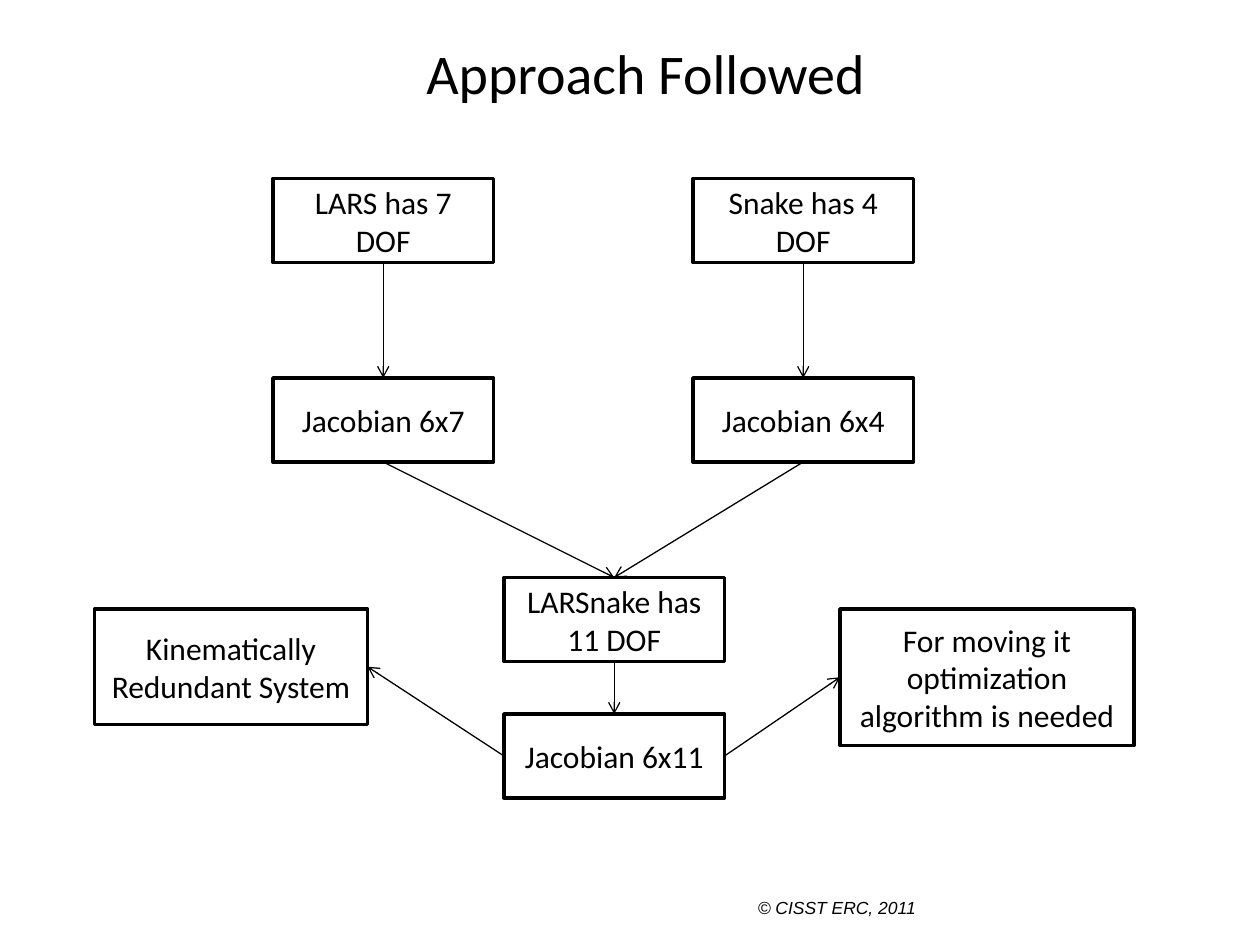
"""Build the "Approach Followed" flowchart slide on a grid of 120 columns by 90 rows."""
from dataclasses import dataclass

from pptx import Presentation
from pptx.dml.color import RGBColor
from pptx.enum.shapes import MSO_CONNECTOR, MSO_SHAPE
from pptx.enum.text import MSO_ANCHOR, PP_ALIGN
from pptx.oxml.ns import qn
from pptx.shapes.autoshape import Shape
from pptx.slide import Slide
from pptx.text.text import TextFrame
from pptx.util import Inches, Pt
from lxml import etree

BLACK = RGBColor(0x00, 0x00, 0x00)
WHITE = RGBColor(0xFF, 0xFF, 0xFF)
RECTANGLE = MSO_SHAPE.RECTANGLE
STRAIGHT = MSO_CONNECTOR.STRAIGHT
MIDDLE = MSO_ANCHOR.MIDDLE
LEFT_ALIGN, CENTER = PP_ALIGN.LEFT, PP_ALIGN.CENTER
TOP, LEFT, BOTTOM, RIGHT = range(4)

PAGE_WIDTH, PAGE_HEIGHT = Inches(10), Inches(7.5)
COLUMN, ROW = PAGE_WIDTH // 120, PAGE_HEIGHT // 90


@dataclass(frozen=True)
class Step:
    """A flowchart box, measured in columns and rows."""
    text: str
    column: int
    row: int
    columns: int = 21
    rows: int = 8


@dataclass(frozen=True)
class Link:
    """An arrow from one side of a step to one side of another."""
    source: str
    target: str
    source_side: int = BOTTOM
    target_side: int = TOP


STEPS = {
    "lars": Step("LARS has 7 DOF", 26, 17),
    "snake": Step("Snake has 4 DOF", 66, 17),
    "lars_jacobian": Step("Jacobian 6x7", 26, 36),
    "snake_jacobian": Step("Jacobian 6x4", 66, 36),
    "larsnake": Step("LARSnake has 11 DOF", 48, 55),
    "larsnake_jacobian": Step("Jacobian 6x11", 48, 68),
    "redundant": Step("Kinematically Redundant System", 9, 58, 26, 11),
    "optimization": Step("For moving it optimization algorithm is needed", 80, 58, 28, 13),
}

LINKS = [
    Link("lars", "lars_jacobian"),
    Link("snake", "snake_jacobian"),
    Link("lars_jacobian", "larsnake"),
    Link("snake_jacobian", "larsnake"),
    Link("larsnake", "larsnake_jacobian"),
    Link("larsnake_jacobian", "redundant", LEFT, RIGHT),
    Link("larsnake_jacobian", "optimization", RIGHT, LEFT),
]


def write(frame: TextFrame, text: str, *, size: int, font: str = "Calibri",
          align: PP_ALIGN = CENTER, anchor: MSO_ANCHOR = MIDDLE,
          italic: bool = False) -> None:
    """Fill a text frame with one formatted paragraph."""
    frame.word_wrap = True
    frame.vertical_anchor = anchor
    para = frame.paragraphs[0]
    para.alignment = align
    span = para.add_run()
    span.text = text
    span.font.name = font
    span.font.size = Pt(size)
    span.font.italic = italic
    span.font.color.rgb = BLACK


def add_title(page: Slide, text: str) -> None:
    """Move and fill the title placeholder."""
    title = page.shapes.title
    title.left, title.top = 23 * COLUMN, 3 * ROW
    title.width, title.height = 77 * COLUMN, Inches(0.64)
    write(title.text_frame, text, size=32)


def add_step(page: Slide, step: Step) -> Shape:
    """Draw one flowchart box."""
    box = page.shapes.add_shape(RECTANGLE, step.column * COLUMN, step.row * ROW,
                                step.columns * COLUMN, step.rows * ROW)
    box.shadow.inherit = False
    box.fill.solid()
    box.fill.fore_color.rgb = WHITE
    box.line.color.rgb = BLACK
    box.line.width = Pt(2)
    write(box.text_frame, step.text, size=18)
    return box


def add_link(page: Slide, link: Link, boxes: dict[str, Shape]) -> None:
    """Draw one arrow glued to two boxes."""
    arrow = page.shapes.add_connector(STRAIGHT, 0, 0, 0, 0)
    arrow.begin_connect(boxes[link.source], link.source_side)
    arrow.end_connect(boxes[link.target], link.target_side)
    arrow.line.color.rgb = BLACK
    arrow.line.width = Pt(0.75)
    properties = arrow._element.spPr
    etree.SubElement(properties.find(qn("a:ln")), qn("a:tailEnd"), type="arrow")
    etree.SubElement(properties, qn("a:effectLst"))


def add_copyright(page: Slide, text: str) -> None:
    """Place the copyright line at the foot of the page."""
    box = page.shapes.add_textbox(71 * COLUMN, Inches(7.07), 18 * COLUMN, Inches(0.27))
    write(box.text_frame, text, size=10, font="Arial", align=LEFT_ALIGN, italic=True)


def main() -> None:
    """Build and save the deck."""
    deck = Presentation()
    deck.slide_width, deck.slide_height = PAGE_WIDTH, PAGE_HEIGHT
    page = deck.slides.add_slide(deck.slide_layouts.get_by_name("Title Only"))
    add_title(page, "Approach Followed")
    boxes = {name: add_step(page, step) for name, step in STEPS.items()}
    for link in LINKS:
        add_link(page, link, boxes)
    add_copyright(page, "© CISST ERC, 2011")
    deck.save("out.pptx")


if __name__ == "__main__":
    main()
